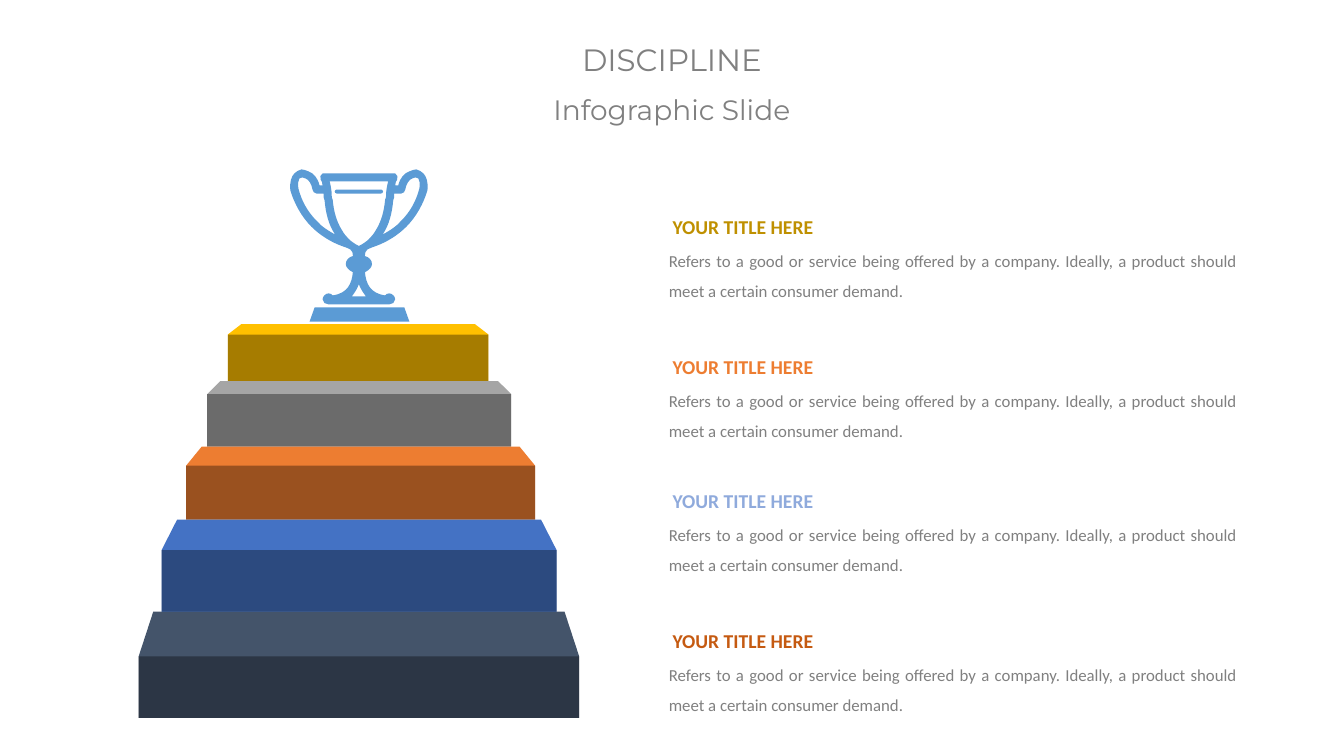
from dataclasses import dataclass
from typing import NamedTuple

from lxml import etree
from pptx import Presentation
from pptx import util as u
from pptx.dml.color import RGBColor
from pptx.enum import shapes, text
from pptx.oxml import ns


@dataclass(frozen=True)
class Theme:
    title_font: str = "Montserrat"
    body_font: str = "Calibri"
    grey: str = "808080"
    black: str = "000000"
    trophy: str = "5B9BD5"
    gold_step: str = "FFC000"
    silver_step: str = "A5A5A5"
    orange: str = "ED7D31"
    blue_step: str = "4472C4"
    slate_step: str = "44546A"
    gold_heading: str = "BF9000"
    blue_heading: str = "8FAADC"
    rust_heading: str = "C55A11"
    title_size: float = 22
    subtitle_size: float = 20
    heading_size: float = 14
    body_size: float = 12
    front_opacity: int = 35


THEME = Theme()


class Box(NamedTuple):
    left: float
    top: float
    width: float
    height: float


class Step(NamedTuple):
    left: float
    width: float
    top: float
    edge: float
    bottom: float
    inset: float
    color: str


class Item(NamedTuple):
    top: float
    color: str


Segment = tuple[float, ...]
Contour = list[Segment]

STEPS = [
    Step(162.7, 186.2, 231.6, 239, 272.2, 9.6, THEME.gold_step),
    Step(148, 217.2, 272.2, 281.5, 319, 9.4, THEME.silver_step),
    Step(133, 249.2, 319, 332.6, 371.2, 11.1, THEME.orange),
    Step(115.4, 282.2, 371.2, 393, 437, 11.1, THEME.blue_step),
    Step(99.1, 314.6, 437, 468.8, 512.8, 10.4, THEME.slate_step),
]
ITEMS = [
    Item(149.8, THEME.gold_heading),
    Item(249.8, THEME.orange),
    Item(345.6, THEME.blue_heading),
    Item(445.6, THEME.rust_heading),
]
HEADING = "YOUR TITLE HERE"
DESCRIPTION = (
    "Refers to a good or service being offered by a company. "
    "Ideally, a product should meet a certain consumer demand."
)

TROPHY_CENTER, TROPHY_TOP, TROPHY_UNIT = 256.4, 121, 0.72
CUP_HALF = [
    (0, 4), (34, 4), (35, 4, 36, 4, 36, 4), (38, 5, 39, 8, 38, 10),
    (37, 11, 36, 14, 36, 16), (39, 16), (41, 8, 45, 4, 50, 2),
    (53, 1, 55, 0, 57, 0), (60, 1, 62, 2, 64, 4), (67, 7, 69, 13, 68, 21),
    (64, 34, 57, 47, 47, 57), (39, 65, 28, 72, 17, 76), (9, 79, 6, 79, 6, 86),
    (10, 87, 13, 90, 13, 94), (13, 97, 10, 100, 6, 102),
    (7, 113, 11, 123, 26, 125), (27, 124, 28, 123, 30, 123),
    (33, 123, 36, 126, 36, 129), (36, 132, 33, 134, 30, 134), (0, 134),
]
BOWL_HALF = [
    (0, 76), (8, 72, 13, 67, 17, 60), (22, 52, 25, 42, 26, 30),
    (27, 29, 27, 27, 27, 25), (27, 21, 28, 16, 29, 12), (0, 12),
]
FOOT_HALF = [(0, 114), (2, 119, 4, 122, 7, 126), (0, 126)]
SLOT_HALF = [(0, 20), (22, 20), (23, 20, 24, 21, 24, 22), (24, 23, 23, 24, 22, 24), (0, 24)]
HANDLE = [
    (35, 24), (35, 26), (35, 27, 35, 29, 34, 31), (33, 43, 30, 55, 24, 64),
    (23, 65), (30, 61, 37, 57, 42, 51), (51, 42, 57, 31, 60, 19),
    (61, 14, 60, 11, 59, 9), (58, 9, 57, 8, 56, 8), (55, 8, 54, 8, 53, 9),
    (50, 10, 47, 14, 46, 20), (46, 22, 44, 24, 42, 24),
]
PLINTH = [(-44, 137), (45, 137), (50, 151), (-49, 151)]


def pairs(segment: Segment) -> list[tuple[float, float]]:
    return list(zip(segment[::2], segment[1::2]))


def mirror(contour: Contour) -> Contour:
    points = [point for segment in contour for point in pairs(segment)]
    flipped = iter([(-x, y) for x, y in reversed(points)])
    mirrored = [next(flipped)]
    for segment in reversed(contour[1:]):
        mirrored.append(sum((next(flipped) for _ in pairs(segment)), ()))
    return mirrored


def whole(half: Contour) -> Contour:
    return half + mirror(half)[1:]


def paint(shape, color: str) -> None:
    shape.fill.solid()
    shape.fill.fore_color.rgb = RGBColor.from_string(color)
    shape.line.fill.background()
    shape.shadow.inherit = False


def draw_outline(slide, contours: list[Contour], color: str) -> None:
    scaled = [[[(u.Pt(x), u.Pt(y)) for x, y in pairs(segment)] for segment in contour]
              for contour in contours]
    builder = slide.shapes.build_freeform(*scaled[0][0][0], scale=1.0)
    for number, contour in enumerate(scaled):
        if number:
            builder.move_to(*contour[0][0])
        builder.add_line_segments([segment[-1] for segment in contour[1:]], close=True)
    shape = builder.convert_to_shape()
    paint(shape, color)
    lines = list(shape._element.iter(ns.qn("a:lnTo")))
    segments = [segment for contour in scaled for segment in contour[1:]]
    for line, segment in zip(lines, segments):
        if len(segment) == 3:
            line.tag = ns.qn("a:cubicBezTo")
            for index, (x, y) in enumerate(segment[:2]):
                control = etree.Element(ns.qn("a:pt"), x=str(x - shape.left), y=str(y - shape.top))
                line.insert(index, control)


def draw_step(slide, step: Step) -> None:
    right = step.left + step.width
    draw_outline(slide, [[
        (right - step.inset, step.top), (step.left + step.inset, step.top),
        (step.left, step.edge), (step.left, step.bottom),
        (right, step.bottom), (right, step.edge),
    ]], step.color)
    front = slide.shapes.add_shape(
        shapes.MSO_SHAPE.RECTANGLE, u.Pt(step.left), u.Pt(step.edge),
        u.Pt(step.width), u.Pt(step.bottom - step.edge))
    paint(front, THEME.black)
    color = front.fill._xPr.find(".//" + ns.qn("a:srgbClr"))
    etree.SubElement(color, ns.qn("a:alpha"), val=str(THEME.front_opacity * 1000))


def draw_trophy(slide) -> None:
    def place(contour: Contour) -> Contour:
        return [sum(((TROPHY_CENTER + x * TROPHY_UNIT, TROPHY_TOP + y * TROPHY_UNIT)
                     for x, y in pairs(segment)), ()) for segment in contour]

    cup = [whole(half) for half in (CUP_HALF, BOWL_HALF, FOOT_HALF, SLOT_HALF)]
    cup += [HANDLE, mirror(HANDLE)]
    draw_outline(slide, [place(contour) for contour in cup], THEME.trophy)
    draw_outline(slide, [place(PLINTH)], THEME.trophy)


def write(shape, content: str, font: str, size: float, color: str,
          align: text.PP_ALIGN, bold: bool = False, wrap: bool = True):
    frame = shape.text_frame
    frame.word_wrap = wrap
    frame.auto_size = text.MSO_AUTO_SIZE.SHAPE_TO_FIT_TEXT
    frame.vertical_anchor = text.MSO_ANCHOR.MIDDLE
    paragraph = frame.paragraphs[0]
    paragraph.alignment = align
    paragraph.space_before = u.Pt(0)
    run = paragraph.add_run()
    run.text = content
    run.font.name, run.font.size, run.font.bold = font, u.Pt(size), bold
    run.font.color.rgb = RGBColor.from_string(color)
    return frame


def fill_title(placeholder, box: Box, content: str, size: float) -> None:
    placeholder.left, placeholder.top, placeholder.width, placeholder.height = map(u.Pt, box)
    write(placeholder, content, THEME.title_font, size, THEME.grey,
          text.PP_ALIGN.CENTER, wrap=False)


def draw_item(slide, item: Item) -> None:
    heading = slide.shapes.add_textbox(*map(u.Pt, Box(473.4, item.top, 149, 24.2)))
    write(heading, HEADING, THEME.body_font, THEME.heading_size, item.color,
          text.PP_ALIGN.LEFT, bold=True)
    body = slide.shapes.add_textbox(*map(u.Pt, Box(469.1, item.top + 17.6, 423.4, 49.7)))
    frame = write(body, DESCRIPTION, THEME.body_font, THEME.body_size, THEME.grey,
                  text.PP_ALIGN.JUSTIFY)
    frame.vertical_anchor = text.MSO_ANCHOR.TOP
    frame.margin_left = frame.margin_right = u.Pt(8.64)
    frame.margin_top = frame.margin_bottom = u.Pt(4.32)
    frame.paragraphs[0].line_spacing = 1.5
    frame.paragraphs[0].space_before = u.Pt(2.4)


def main() -> None:
    presentation = Presentation()
    presentation.slide_width, presentation.slide_height = u.Pt(960), u.Pt(540)
    slide = presentation.slides.add_slide(presentation.slide_layouts[0])
    fill_title(slide.shapes.title, Box(407.5, 25.2, 144.8, 33.8), "DISCIPLINE", THEME.title_size)
    fill_title(slide.placeholders[1], Box(387, 62.6, 185.8, 31.7), "Infographic Slide",
               THEME.subtitle_size)
    for step in STEPS:
        draw_step(slide, step)
    draw_trophy(slide)
    for item in ITEMS:
        draw_item(slide, item)
    presentation.save("out.pptx")


if __name__ == "__main__":
    main()
